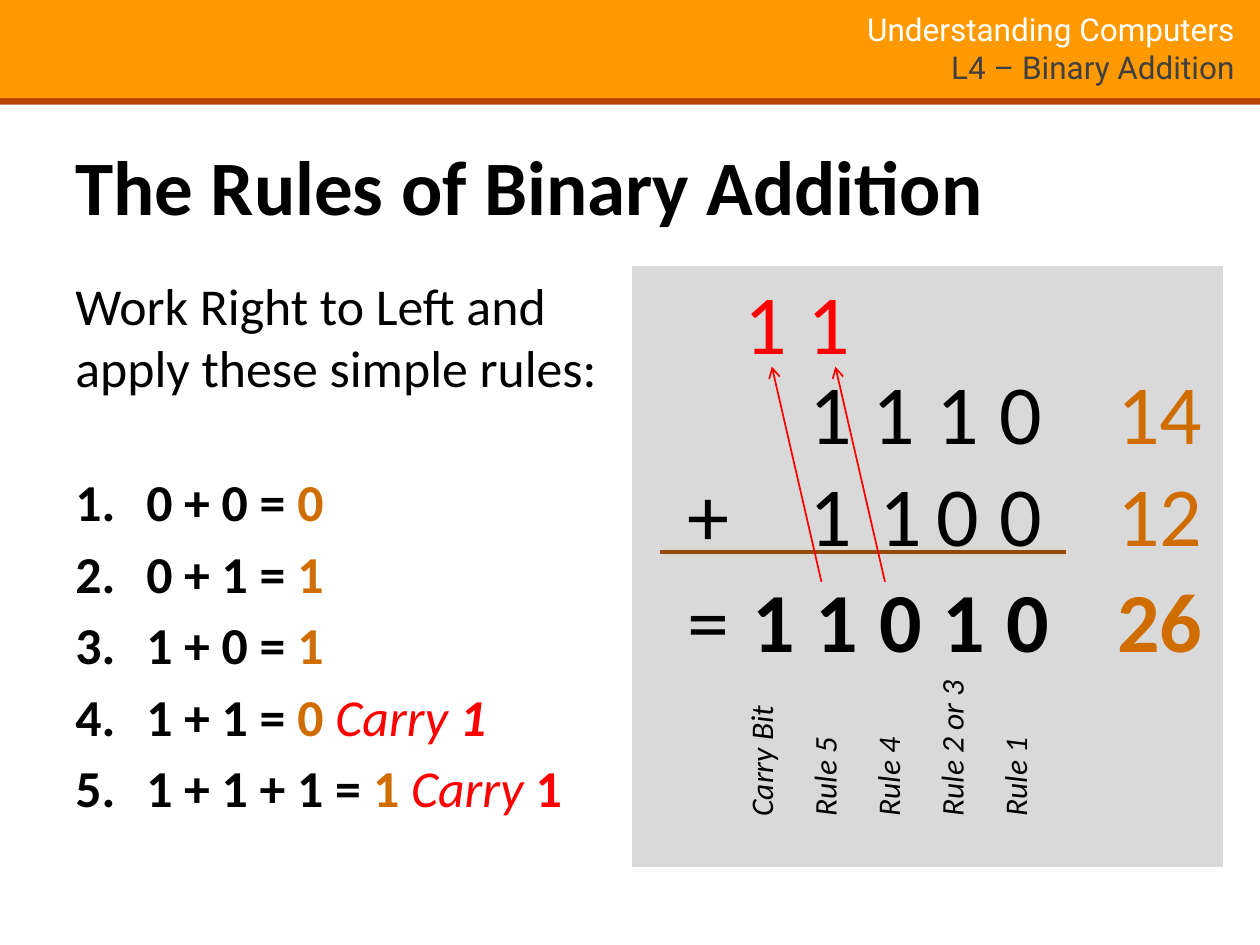
import dataclasses

import lxml.etree
import pptx
import pptx.dml.color
import pptx.enum.shapes
import pptx.enum.text
import pptx.oxml.ns
import pptx.util

Cm = pptx.util.Cm
Pt = pptx.util.Pt
ALIGN = pptx.enum.text.PP_ALIGN


@dataclasses.dataclass(frozen=True)
class Theme:
    font: str = "Calibri"
    header_font: str = "Roboto"
    black: str = "000000"
    white: str = "FFFFFF"
    grey: str = "404040"
    panel: str = "D9D9D9"
    band: str = "FF9900"
    band_edge: str = "BB4301"
    answer: str = "D06D00"
    carry: str = "FF0000"
    sum_line: str = "984807"
    title_size: float = 44
    body_size: float = 29.6
    digit_size: float = 48
    small_size: float = 18


def rgb(value):
    return pptx.dml.color.RGBColor.from_string(value)


def add_element(parent, tag, **attributes):
    return lxml.etree.SubElement(parent, pptx.oxml.ns.qn(tag), attributes)


class SlideBuilder:
    def __init__(self, page, theme):
        self.page = page
        self.theme = theme

    def rectangle(self, left, top, width, height, fill, line=None):
        shape = self.page.shapes.add_shape(
            pptx.enum.shapes.MSO_SHAPE.RECTANGLE, Cm(left), Cm(top), Cm(width), Cm(height))
        shape.shadow.inherit = False
        shape.fill.solid()
        shape.fill.fore_color.rgb = rgb(fill)
        if line:
            shape.line.color.rgb = rgb(line)
            shape.line.width = Pt(2)
        else:
            shape.line.fill.background()

    def line(self, start, end, color, weight, arrow=False):
        connector = self.page.shapes.add_connector(
            pptx.enum.shapes.MSO_CONNECTOR.STRAIGHT,
            Cm(start[0]), Cm(start[1]), Cm(end[0]), Cm(end[1]))
        connector.line.color.rgb = rgb(color)
        connector.line.width = Pt(weight)
        if arrow:
            add_element(connector.line._get_or_add_ln(), "a:tailEnd", type="arrow")
        add_element(connector._element.spPr, "a:effectLst")

    def text_box(self, left, top, width, height):
        box = self.page.shapes.add_textbox(Cm(left), Cm(top), Cm(width), Cm(height))
        box.text_frame.word_wrap = True
        return box

    def style(self, para, size, color=None, name=None, bold=False, italic=False):
        font = para.font
        font.name = name or self.theme.font
        font.size = Pt(size)
        font.bold = bold
        font.italic = italic
        font.color.rgb = rgb(color or self.theme.black)

    def span(self, para, text, color=None, bold=None, italic=None):
        run = para.add_run()
        run.text = text
        run.font.bold = bold
        run.font.italic = italic
        if color:
            run.font.color.rgb = rgb(color)

    def header(self, course, lesson):
        para = self.text_box(12.67, 0.08, 12.47, 1.75).text_frame.paragraphs[0]
        para.alignment = ALIGN.RIGHT
        self.style(para, self.theme.small_size, name=self.theme.header_font)
        self.span(para, course, self.theme.white)
        para.add_line_break()
        self.span(para, lesson, self.theme.grey)

    def title(self, text):
        para = self.text_box(1.27, 2.67, 22.86, 3.18).text_frame.paragraphs[0]
        self.style(para, self.theme.title_size, bold=True)
        self.span(para, text)

    def rules(self, intro, rules):
        """Intro followed by numbered rules: (sum, result, carried digit, digit is italic)."""
        theme = self.theme
        frame = self.text_box(1.27, 5.4, 11.23, 12.5).text_frame
        para = frame.paragraphs[0]
        self.style(para, theme.body_size)
        self.span(para, intro)
        for index, (addition, result, carried, slanted) in enumerate(rules):
            para = frame.add_paragraph()
            para.space_before = Pt(5.3 if index else 41)
            properties = para._p.get_or_add_pPr()
            properties.set("marL", str(Cm(1.43)))
            properties.set("indent", str(-Cm(1.43)))
            add_element(properties, "a:buFont", typeface="+mj-lt")
            add_element(properties, "a:buAutoNum", type="arabicPeriod")
            self.style(para, theme.body_size, bold=True)
            self.span(para, f"{addition} = ")
            self.span(para, f"{result} " if carried else result, theme.answer)
            if carried:
                self.span(para, "Carry ", theme.carry, bold=False, italic=True)
                self.span(para, carried, theme.carry, italic=slanted)

    def label(self, text, center, top, width, height, size,
              color=None, bold=False, italic=False, upward=False):
        """One unwrapped line centred on a column, optionally reading upward."""
        box = self.text_box(center - width / 2, top, width, height)
        frame = box.text_frame
        frame.word_wrap = False
        frame.auto_size = pptx.enum.text.MSO_AUTO_SIZE.SHAPE_TO_FIT_TEXT
        para = frame.paragraphs[0]
        if upward:
            box._element.txBody.bodyPr.set("vert", "vert270")
        else:
            para.alignment = ALIGN.CENTER
        self.style(para, size, color, bold=bold, italic=italic)
        self.span(para, text)


def column(index):
    """Centre of a binary digit column, counted from the carry bit."""
    return 15.43 + 1.28 * index


def draw_addition(builder):
    theme = builder.theme
    size = theme.digit_size
    carry_top, first_top, second_top, sum_top = 5.33, 7.14, 9.19, 11.33
    sign_center, decimal_center = 14.19, 23.38
    wide, narrow = 1.29, 1.02

    builder.rectangle(12.7, 5.33, 11.99, 12.19, theme.panel, theme.white)
    rows = [
        (first_top, "", " 1110", "14", False),
        (second_top, "+", " 1100", "12", False),
        (sum_top, "=", "11010", "26", True),
    ]
    for top, sign, digits, decimal, bold in rows:
        for index, digit in enumerate(digits):
            if digit != " ":
                tight = bold or (top == second_top and index == 2)
                builder.label(digit, column(index), top, narrow if tight else wide,
                              1.7 if tight else 2.13, size, bold=bold)
        if sign:
            builder.label(sign, sign_center, top, 1.14, 2.13, size)
        builder.label(decimal, decimal_center, top, 2.26, 2.31, size, theme.answer, bold)
    builder.line((13.31, 11.13), (21.49, 11.13), theme.sum_line, 2.25)

    for index in range(2):
        builder.label("1", column(index), carry_top, 1.37, 2.31, size, theme.carry)
        builder.line((column(index + 1) - 0.15, 11.73), (column(index) + 0.13, 7.39),
                     theme.carry, 1, arrow=True)

    notes_bottom = 16.71
    notes = [("Carry Bit", 2.49), ("Rule 5", 1.85), ("Rule 4", 1.85),
             ("Rule 2 or 3", 3.02), ("Rule 1", 1.85)]
    for index, (note, height) in enumerate(notes):
        builder.label(note, column(index) + 0.03, notes_bottom - height, 1.27, height,
                      theme.small_size, italic=True, upward=True)


def main():
    deck = pptx.Presentation()
    deck.slide_width, deck.slide_height = Cm(25.4), Cm(19.05)
    theme = Theme()
    builder = SlideBuilder(deck.slides.add_slide(deck.slide_layouts[6]), theme)
    builder.rectangle(-0.1, 1.96, 25.55, 0.15, theme.band_edge)
    builder.rectangle(-0.1, -0.03, 25.55, 2.01, theme.band)
    builder.header("Understanding Computers", "L4 – Binary Addition")
    builder.title("The Rules of Binary Addition")
    builder.rules("Work Right to Left and apply these simple rules:", [
        ("0 + 0", "0", "", False),
        ("0 + 1", "1", "", False),
        ("1 + 0", "1", "", False),
        ("1 + 1", "0", "1", True),
        ("1 + 1 + 1", "1", "1", False),
    ])
    draw_addition(builder)
    deck.save("out.pptx")


if __name__ == "__main__":
    main()
